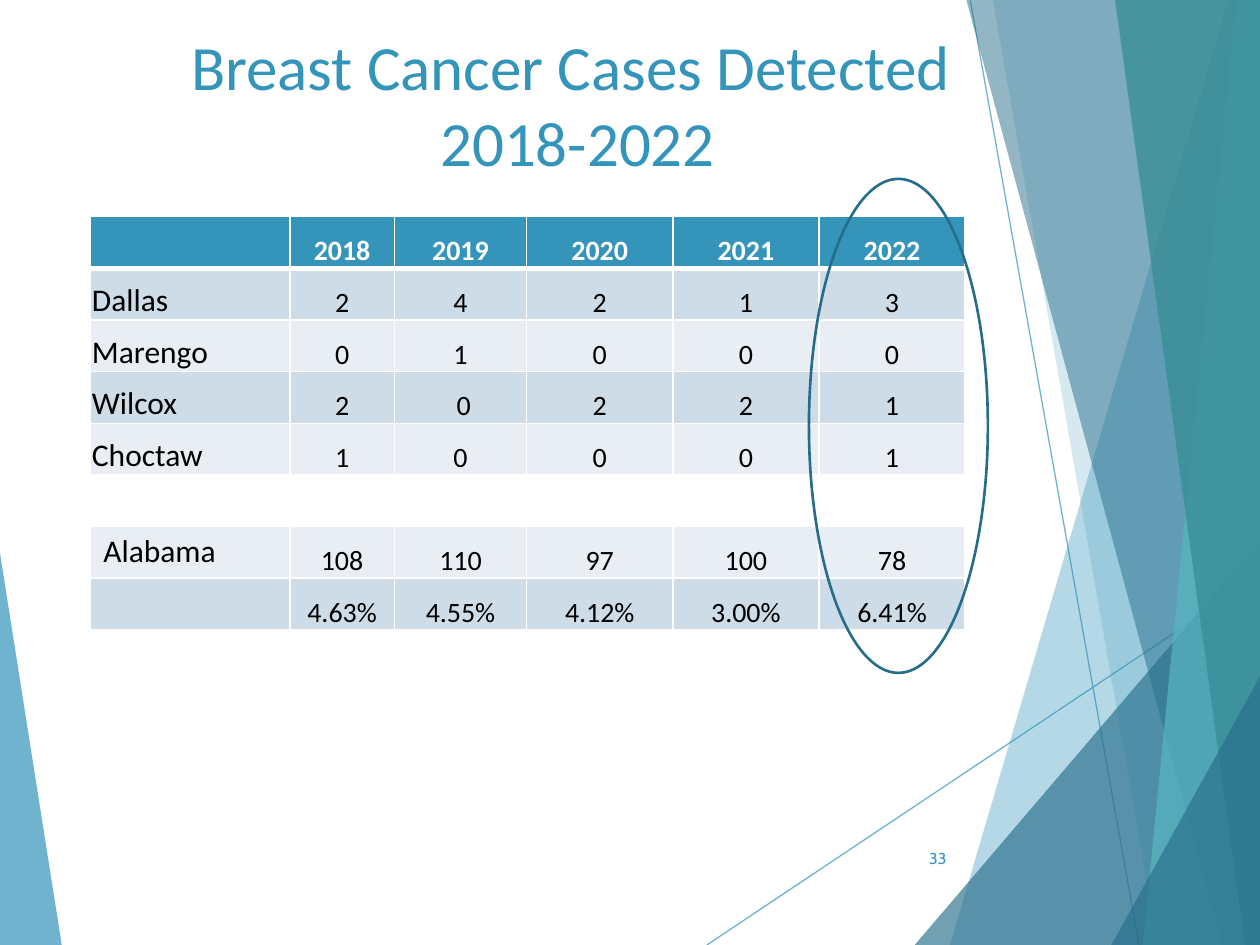
import dataclasses

import lxml.etree
import pptx
import pptx.dml.color
import pptx.enum.shapes
import pptx.enum.text
import pptx.oxml
import pptx.oxml.ns
import pptx.util

Inches = pptx.util.Inches
Align = pptx.enum.text.PP_ALIGN
Anchor = pptx.enum.text.MSO_ANCHOR
qn = pptx.oxml.ns.qn


@dataclasses.dataclass(frozen=True)
class Theme:
    blue: str = "3494BA"
    deep_blue: str = "276F8B"
    ring: str = "266D8A"
    aqua: str = "58B6C0"
    teal: str = "3A8F98"
    band_dark: str = "CEDCE7"
    band_light: str = "E8EEF3"
    white: str = "FFFFFF"
    black: str = "000000"
    font: str = "Calibri"
    number_font: str = "Cabin"
    title_size: int = 36
    label_size: int = 18
    value_size: int = 16
    number_size: int = 9


THEME = Theme()


def rgb(color):
    return pptx.dml.color.RGBColor.from_string(color)


def write_text(frame, text, size, color, font=THEME.font, bold=False, align=Align.LEFT):
    paragraph = frame.paragraphs[0]
    paragraph.alignment = align
    for index, line in enumerate(text.split("\n")):
        if index:
            paragraph.add_line_break()
        run = paragraph.add_run()
        run.text = line
        run.font.name = font
        run.font.size = pptx.util.Pt(size)
        run.font.bold = bold
        run.font.color.rgb = rgb(color)


def set_opacity(element, percent):
    color = element.find(".//" + qn("a:srgbClr"))
    lxml.etree.SubElement(color, qn("a:alpha"), val=str(percent * 1000))


def set_borders(cell, color, widths):
    properties = cell._tc.get_or_add_tcPr()
    for index, (side, width) in enumerate(widths.items()):
        line = lxml.etree.Element(qn("a:ln" + side), w=str(pptx.util.Pt(width)))
        fill = lxml.etree.SubElement(line, qn("a:solidFill"))
        lxml.etree.SubElement(fill, qn("a:srgbClr"), val=color)
        properties.insert(index, line)


class SlideBuilder:
    def __init__(self, slide, theme):
        self.slide = slide
        self.shapes = slide.shapes
        self.theme = theme

    def polygon(self, points, color, opacity):
        start, *rest = [(Inches(x), Inches(y)) for x, y in points]
        builder = self.shapes.build_freeform(*start)
        builder.add_line_segments(rest, close=True)
        shape = builder.convert_to_shape()
        shape.shadow.inherit = False
        shape.fill.solid()
        shape.fill.fore_color.rgb = rgb(color)
        set_opacity(shape.element.spPr, opacity)
        shape.line.fill.background()

    def line(self, start, end, color, width, opacity):
        ends = [Inches(value) for value in (*start, *end)]
        connector = self.shapes.add_connector(pptx.enum.shapes.MSO_CONNECTOR.STRAIGHT, *ends)
        connector.line.color.rgb = rgb(color)
        connector.line.width = pptx.util.Pt(width)
        properties = connector.element.spPr
        set_opacity(properties, opacity)
        lxml.etree.SubElement(properties, qn("a:effectLst"))

    def title(self, text, left, top, width, height):
        shape = self.shapes.title
        shape.element.getparent().append(shape.element)
        shape.left, shape.top = Inches(left), Inches(top)
        shape.width, shape.height = Inches(width), Inches(height)
        shape.text_frame.vertical_anchor = Anchor.TOP
        write_text(shape.text_frame, text, self.theme.title_size, self.theme.blue,
                   align=Align.CENTER)

    def slide_number(self, text, left, top, width, height):
        box = self.shapes.add_textbox(Inches(left), Inches(top), Inches(width), Inches(height))
        box.text_frame.word_wrap = True
        box.text_frame.vertical_anchor = Anchor.MIDDLE
        write_text(box.text_frame, text, self.theme.number_size, self.theme.blue,
                   font=self.theme.number_font, align=Align.RIGHT)

    def table(self, rows, left, top, widths, row_height):
        table = self.shapes.add_table(
            len(rows), len(widths), Inches(left), Inches(top),
            Inches(sum(widths)), Inches(row_height * len(rows))).table
        table.first_row = table.horz_banding = False
        for column, width in zip(table.columns, widths):
            column.width = Inches(width)
        for row_index, values in enumerate(rows):
            table.rows[row_index].height = Inches(row_height)
            for column_index, value in enumerate(values):
                cell = table.cell(row_index, column_index)
                self.fill_cell(cell, row_index, any(values))
                if value:
                    self.write_cell(cell, value, row_index == 0, column_index == 0)

    def fill_cell(self, cell, row_index, has_fill):
        theme = self.theme
        if has_fill:
            band = theme.band_dark if row_index % 2 else theme.band_light
            cell.fill.solid()
            cell.fill.fore_color.rgb = rgb(theme.blue if row_index == 0 else band)
        else:
            cell.fill.background()
        set_borders(cell, theme.white, {"L": 1, "R": 1, "T": 3 if row_index == 1 else 1,
                                        "B": 3 if row_index == 0 else 1})

    def write_cell(self, cell, text, is_header, is_label):
        theme = self.theme
        if text != "Alabama":
            cell.vertical_anchor = Anchor.BOTTOM
            cell.margin_left = cell.margin_right = cell.margin_top = Inches(0.01)
            cell.margin_bottom = 0
        write_text(cell.text_frame, text,
                   theme.label_size if is_label else theme.value_size,
                   theme.white if is_header else theme.black, bold=is_header,
                   align=Align.LEFT if is_label else Align.CENTER)

    def ring(self, left, top, width, height):
        shape = self.shapes.add_shape(
            pptx.enum.shapes.MSO_SHAPE.OVAL,
            Inches(left), Inches(top), Inches(width), Inches(height))
        shape.shadow.inherit = False
        shape.fill.background()
        shape.line.color.rgb = rgb(self.theme.ring)
        shape.line.width = pptx.util.Pt(1.5)


def main():
    presentation = pptx.Presentation()
    presentation.slide_width, presentation.slide_height = Inches(10), Inches(7.5)
    slide = presentation.slides.add_slide(presentation.slide_layouts[5])
    builder = SlideBuilder(slide, THEME)

    builder.polygon([(0, 4.39), (0.49, 7.5), (0, 7.5)], THEME.blue, 70)
    for start, end in [((5.61, 7.5), (10, 4.57)), ((7.7, 0), (9.04, 7.5))]:
        builder.line(start, end, THEME.blue, 0.75, 70)
    right_edge_facets = [
        (9.75, 0, 7.54, 7.5, THEME.blue, 36),
        (7.88, 0, 9.19, 7.5, THEME.blue, 20),
        (10, 4.29, 7.26, 7.5, THEME.deep_blue, 66),
        (7.67, 0, 9.7, 7.5, THEME.deep_blue, 50),
        (9.81, 0, 9.07, 7.5, THEME.aqua, 70),
        (8.85, 0, 9.88, 7.5, THEME.teal, 82),
        (10, 5.37, 8.82, 7.5, THEME.deep_blue, 66),
    ]
    for top_x, top_y, bottom_x, bottom_y, color, opacity in right_edge_facets:
        corners = [(top_x, top_y), (bottom_x, bottom_y), (10, bottom_y), (10, top_y)]
        builder.polygon(corners, color, opacity)

    builder.title("Breast Cancer Cases Detected \n2018-2022", 0.67, 0.17, 7.83, 1.5)
    builder.slide_number("33", 7.05, 6.61, 0.56, 0.4)
    rows = [
        ("", "2018", "2019", "2020", "2021", "2022"),
        ("Dallas", "2", "4", "2", "1", "3"),
        ("Marengo", "0", "1", "0", "0", "0"),
        ("Wilcox", "2", "\u00a00", "2", "2", "1"),
        ("Choctaw", "1", "0", "0", "0", "1"),
        ("",) * 6,
        ("Alabama", "108", "110", "97", "100", "78"),
        ("", "4.63%", "4.55%", "4.12%", "3.00%", "6.41%"),
    ]
    builder.table(rows, 0.72, 1.72, [1.58, 0.83, 1.05, 1.16, 1.16, 1.16], 0.41)
    builder.ring(6.42, 1.42, 1.42, 3.92)
    presentation.save("out.pptx")


if __name__ == "__main__":
    main()
